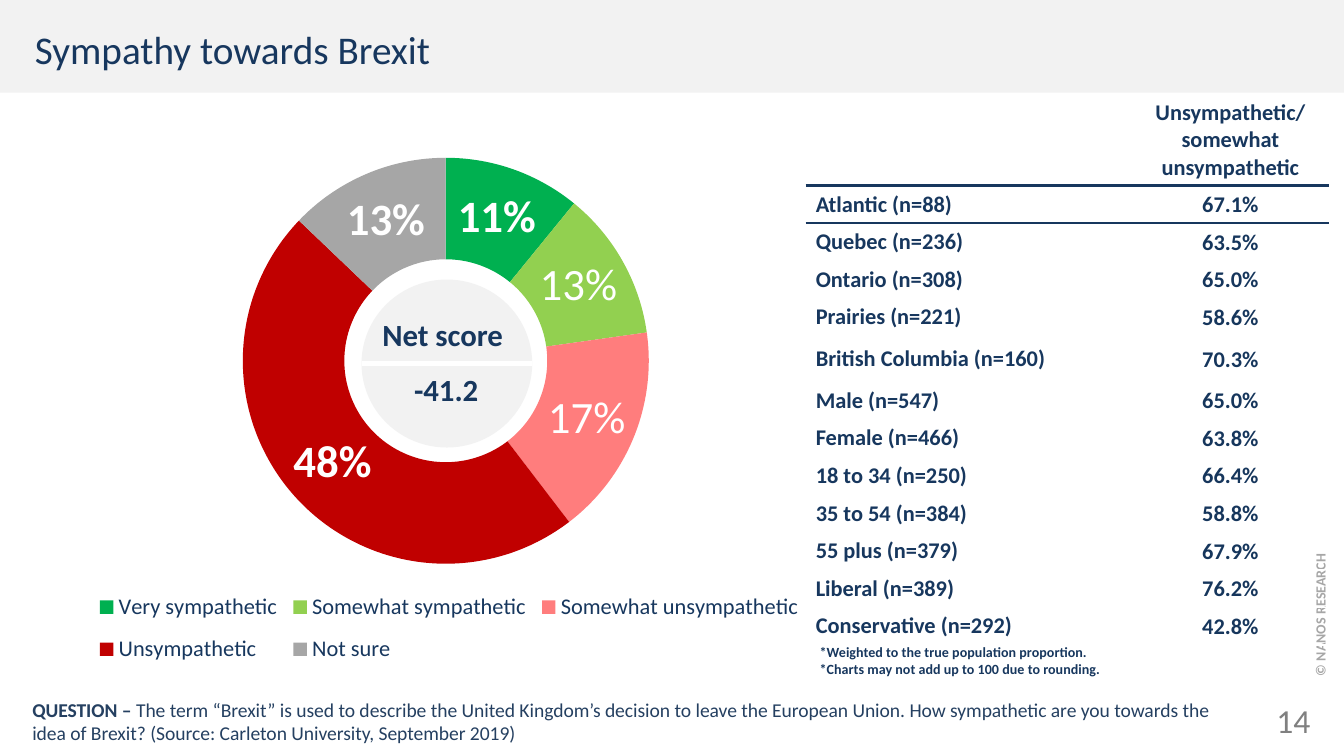
import dataclasses

import lxml.etree
import pptx
import pptx.chart.data
import pptx.dml.color
import pptx.enum.chart
import pptx.enum.shapes
import pptx.enum.text
import pptx.oxml
import pptx.oxml.ns
import pptx.util

ALIGN = pptx.enum.text.PP_ALIGN
ANCHOR = pptx.enum.text.MSO_ANCHOR
SHAPE = pptx.enum.shapes.MSO_SHAPE
QN = pptx.oxml.ns.qn
COLUMNS, ROWS = 100, 56.25
SLIDE_WIDTH, SLIDE_HEIGHT = pptx.util.Inches(10), pptx.util.Inches(5.625)


@dataclasses.dataclass(frozen=True)
class Theme:
    font: str = "Calibri"
    navy: str = "17375E"
    value: str = "16365C"
    question: str = "254061"
    panel: str = "F2F2F2"
    white: str = "FFFFFF"
    muted: str = "A6A6A6"
    page_number: str = "808080"
    slices: tuple = ("00B050", "92D050", "FF7D7D", "C00000", "A6A6A6")
    title_size: float = 21
    label_size: float = 24
    score_size: float = 16.5
    number_size: float = 18
    body_size: float = 12
    question_size: float = 10.5
    note_size: float = 7.5
    rule: float = 1.5
    divider: float = 2.25
    tight: tuple = (0.7, 0.4, 0.7, 0.4)
    regular: tuple = (1, 0.5, 1, 0.5)
    narrow: tuple = (0.5, 0.3, 0.5, 0.3)
    value_insets: tuple = (0.1, 0.1, 0.1, 0)


THEME = Theme()


def across(columns):
    return round(columns * SLIDE_WIDTH / COLUMNS)


def down(rows):
    return round(rows * SLIDE_HEIGHT / ROWS)


@dataclasses.dataclass(frozen=True)
class Box:
    column: float
    row: float
    columns: float
    rows: float

    def inner(self, column, row, columns, rows):
        return Box(self.column + column, self.row + row, columns, rows)

    def frame(self):
        return across(self.column), down(self.row), across(self.columns), down(self.rows)


def colour(value):
    return pptx.dml.color.RGBColor.from_string(value)


def style(font, size, value, bold=False):
    font.name = THEME.font
    font.size = pptx.util.Pt(size)
    font.color.rgb = colour(value)
    font.bold = bold


def add_span(para, text, size, value, bold=False):
    span = para.add_run()
    span.text = text
    style(span.font, size, value, bold)


def set_insets(holder, insets):
    holder.margin_left, holder.margin_right = across(insets[0]), across(insets[2])
    holder.margin_top, holder.margin_bottom = down(insets[1]), down(insets[3])


def add_text(page, box, paras, insets, align=ALIGN.LEFT, anchor=ANCHOR.TOP, spacing=None):
    frame = page.shapes.add_textbox(*box.frame()).text_frame
    frame.word_wrap = True
    frame.vertical_anchor = anchor
    set_insets(frame, insets)
    for index, spans in enumerate(paras):
        para = frame.add_paragraph() if index else frame.paragraphs[0]
        para.alignment = align
        para.line_spacing = spacing
        for span in spans:
            add_span(para, *span)
    return frame


def add_panel(page, box, kind):
    shape = page.shapes.add_shape(kind, *box.frame())
    shape.shadow.inherit = False
    shape.fill.solid()
    shape.fill.fore_color.rgb = colour(THEME.panel)
    shape.line.fill.background()


def header(page, box):
    add_panel(page, box, SHAPE.RECTANGLE)
    add_text(page, box.inner(1.9, 0.2, 43.7, 6.9),
             [[("Sympathy towards Brexit", THEME.title_size, THEME.navy)]],
             THEME.tight, anchor=ANCHOR.MIDDLE)


def set_layout(parent, index, inner, **shares):
    for old in parent.findall(QN("c:layout")):
        parent.remove(old)
    layout = pptx.oxml.parse_xml(f'<c:layout {pptx.oxml.ns.nsdecls("c")}/>')
    manual = lxml.etree.SubElement(layout, QN("c:manualLayout"))
    settings = {"layoutTarget": "inner"} if inner else {}
    settings |= {"xMode": "edge", "yMode": "edge"} | shares
    for name, value in settings.items():
        lxml.etree.SubElement(manual, QN(f"c:{name}")).set("val", str(value))
    parent.insert(index, layout)


def doughnut(page, box):
    data = pptx.chart.data.CategoryChartData()
    data.categories = ["Very sympathetic", "Somewhat sympathetic",
                       "Somewhat unsympathetic", "Unsympathetic", "Not sure"]
    data.add_series("Series 1", (11, 12, 17, 48, 13))
    kind = pptx.enum.chart.XL_CHART_TYPE.DOUGHNUT
    chart = page.shapes.add_chart(kind, *box.frame(), data).chart
    chart.has_title = False
    chart.font.name = THEME.font
    chart.font.size = pptx.util.Pt(THEME.number_size)
    chart.has_legend = True
    chart.legend.position = pptx.enum.chart.XL_LEGEND_POSITION.RIGHT
    chart.legend.include_in_layout = False
    style(chart.legend.font, THEME.body_size, THEME.navy)
    plot = chart.plots[0]
    plot.vary_by_categories = True
    series = plot.series[0]
    for index, value in enumerate(THEME.slices):
        fill = series.points[index].format.fill
        fill.solid()
        fill.fore_color.rgb = colour(value)
    labels = series.data_labels
    labels.show_percentage = True
    labels.show_value = False
    labels.number_format = "0%"
    labels.number_format_is_linked = False
    style(labels.font, THEME.label_size, THEME.white, True)
    for index, text in ((1, "13%"), (2, "17%")):
        para = series.points[index].data_label.text_frame.paragraphs[0]
        add_span(para, text, THEME.label_size, THEME.white)
    root = chart._chartSpace
    root.xpath(".//c:holeSize")[0].set("val", "55")
    set_layout(root.xpath("c:chart/c:plotArea")[0], 0, True, x=0.225, y=0.102, w=0.572, h=0.693)
    set_layout(root.xpath("c:chart/c:legend")[0], 1, False, x=0.08, y=0.82, w=0.87, h=0.17)


def net_score(page, box):
    add_panel(page, box, SHAPE.FLOWCHART_CONNECTOR)
    add_text(page, box.inner(-1, 0.8, 14.6, 10.6),
             [[(text, THEME.score_size, THEME.navy, True)] for text in ("Net score ", "-41.2")],
             THEME.regular, ALIGN.CENTER, spacing=1.5)
    left, right = across(box.column), across(box.column + box.columns)
    middle = down(box.row + box.rows / 2)
    line = page.shapes.add_connector(
        pptx.enum.shapes.MSO_CONNECTOR.STRAIGHT, left, middle, right, middle)
    line.line.color.rgb = colour(THEME.white)
    line.line.width = pptx.util.Pt(THEME.divider)
    lxml.etree.SubElement(line._element.spPr, QN("a:effectLst"))


def add_rule(cell, side):
    edge = pptx.oxml.parse_xml(
        f'<a:{side} {pptx.oxml.ns.nsdecls("a")} w="{pptx.util.Pt(THEME.rule)}">'
        f'<a:solidFill><a:srgbClr val="{THEME.navy}"/></a:solidFill></a:{side}>')
    cell._tc.get_or_add_tcPr().insert(0, edge)


def breakdown(page, box):
    records = [
        ("", "Unsympathetic/ somewhat unsympathetic"),
        ("Atlantic (n=88)", "67.1%"), ("Quebec (n=236)", "63.5%"),
        ("Ontario (n=308)", "65.0%"), ("Prairies (n=221)", "58.6%"),
        ("British Columbia (n=160)", "70.3%"),
        ("Male (n=547)", "65.0%"), ("Female (n=466)", "63.8%"),
        ("18 to 34 (n=250)", "66.4%"), ("35 to 54 (n=384)", "58.8%"),
        ("55 plus (n=379)", "67.9%"),
        ("Liberal (n=389)", "76.2%"), ("Conservative (n=292)", "42.8%"),
    ]
    heights = {0: 5.3, 5: 3.4}
    table = page.shapes.add_table(len(records), 2, *box.frame()).table
    table.first_row = table.horz_banding = False
    for column, width in zip(table.columns, (24.3, 14.5)):
        column.width = across(width)
    for row, record in enumerate(records):
        table.rows[row].height = down(heights.get(row, 2.4))
        for column, text in enumerate(record):
            cell = table.cell(row, column)
            is_value = row > 0 and column == 1
            cell.fill.background()
            cell.vertical_anchor = ANCHOR.MIDDLE
            set_insets(cell, THEME.value_insets if is_value else THEME.tight)
            para = cell.text_frame.paragraphs[0]
            para.alignment = ALIGN.CENTER if column else ALIGN.LEFT
            if text:
                add_span(para, text, THEME.body_size,
                         THEME.value if is_value else THEME.navy, True)
            if row < 2:
                add_rule(cell, "lnT" if row else "lnB")


def notes(page, box):
    lines = ("*Weighted to the true population proportion.",
             "*Charts may not add up to 100 due to rounding.")
    add_text(page, box, [[(text, THEME.note_size, THEME.navy, True)] for text in lines],
             THEME.regular)


def copyright_line(page, box):
    frame = add_text(page, box, [[("© NANOS RESEARCH", THEME.note_size, THEME.muted, True)]],
                     THEME.regular)
    frame._txBody.bodyPr.set("vert", "vert270")


def footer(page, box):
    question = ("The term “Brexit” is used to describe the United Kingdom’s decision to leave "
                "the European Union. How sympathetic are you towards the idea of Brexit? "
                "(Source: Carleton University, September 2019)")
    add_text(page, box.inner(0, 0, 89.2, 4.1),
             [[("QUESTION – ", THEME.question_size, THEME.question, True),
               (question, THEME.question_size, THEME.question)]], THEME.narrow)
    add_text(page, box.inner(92, 0.5, 4.3, 3),
             [[("14", THEME.number_size, THEME.page_number)]],
             THEME.tight, ALIGN.RIGHT, ANCHOR.MIDDLE)


def main():
    deck = pptx.Presentation()
    deck.slide_width, deck.slide_height = SLIDE_WIDTH, SLIDE_HEIGHT
    page = deck.slides.add_slide(deck.slide_layouts[6])
    header(page, Box(0, 0, COLUMNS, 6.9))
    copyright_line(page, Box(97.1, 40, 3.3, 11.3))
    doughnut(page, Box(1.9, 7.3, 61.2, 43.6))
    net_score(page, Box(26.9, 20.8, 12.7, 12.5))
    footer(page, Box(1.9, 51.6, 96.3, 4.1))
    notes(page, Box(60, 47.4, 23.1, 3.5))
    breakdown(page, Box(60, 7, 38.8, 40.4))
    deck.save("out.pptx")


if __name__ == "__main__":
    main()
